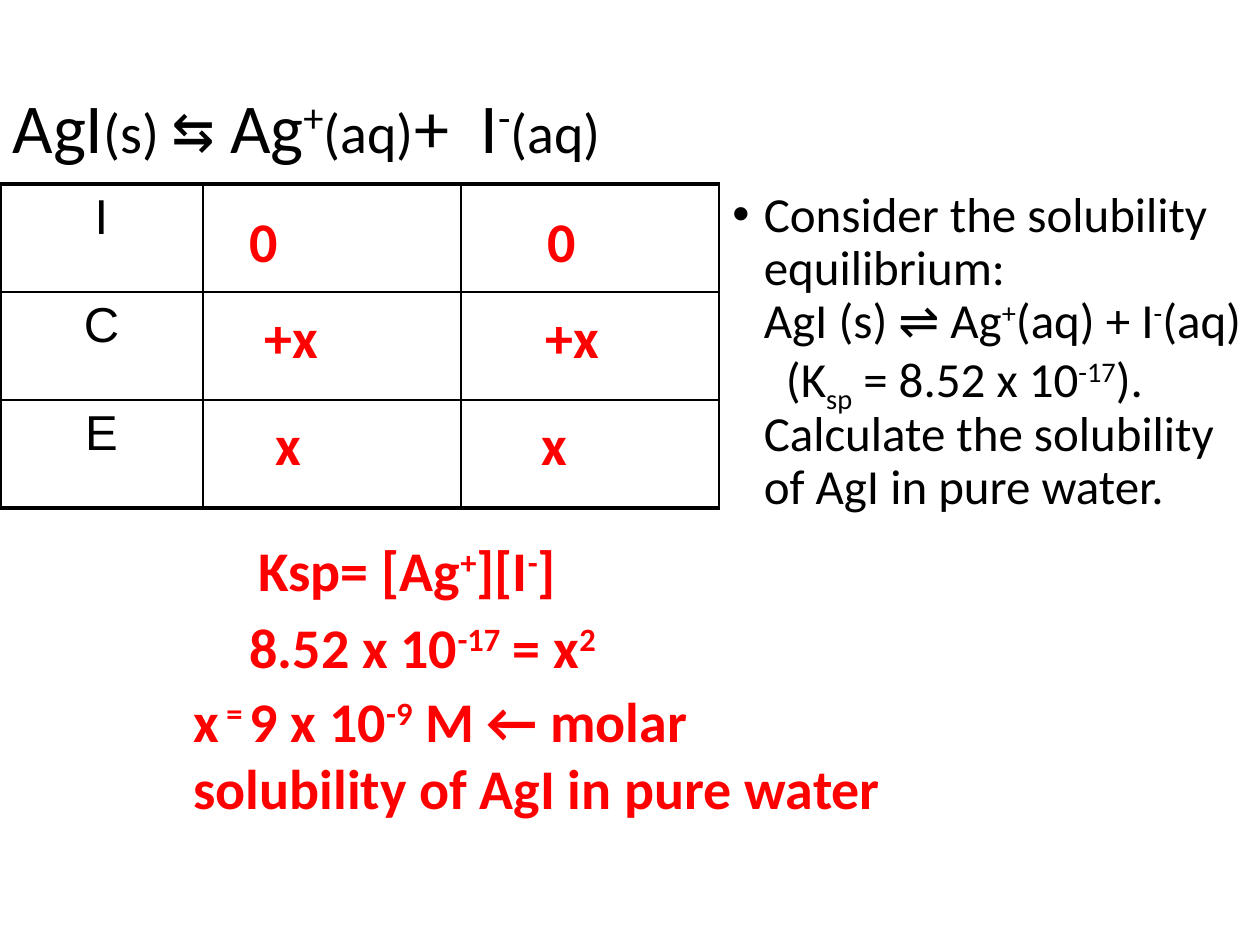
"""Build a slide that works out the solubility of AgI with an ICE table."""
import pptx
import pptx.dml.color
import pptx.enum.text
import pptx.oxml
import pptx.oxml.ns
import pptx.util

SCALE = 914400 / 126
BLACK = pptx.dml.color.RGBColor(0x00, 0x00, 0x00)
RED = pptx.dml.color.RGBColor(0xFF, 0x00, 0x00)
NAMESPACE = pptx.oxml.ns.nsdecls("a")


def box(*lengths):
    return [pptx.util.Emu(round(length * SCALE)) for length in lengths]


def write(paragraph, runs, size, color, bold=False, name="Calibri"):
    paragraph.font.name = name
    paragraph.font.size = pptx.util.Pt(size)
    paragraph.font.bold = bold
    paragraph.font.color.rgb = color
    for text, baseline in runs:
        if text == "\n":
            paragraph.add_line_break()
            continue
        run = paragraph.add_run()
        run.text = text
        if baseline:
            run.font._element.set("baseline", str(baseline * 1000))


presentation = pptx.Presentation()
presentation.slide_width, presentation.slide_height = box(1260, 945)
slide = presentation.slides.add_slide(presentation.slide_layouts[5])

title = slide.shapes.title
title.left, title.top, title.width, title.height = box(0, 39, 1086, 183)
title.text_frame.vertical_anchor = pptx.enum.text.MSO_ANCHOR.MIDDLE
paragraph = title.text_frame.paragraphs[0]
paragraph.alignment = pptx.enum.text.PP_ALIGN.LEFT
paragraph.line_spacing = 0.9
title_runs = [
    ("AgI", 40, 0), ("(s) ", 32, 0), ("⇆", 40, 0), (" Ag", 40, 0), ("+", 40, 30),
    ("(aq)", 32, 0), ("+  I", 40, 0), ("-", 40, 30), ("(aq)", 32, 0),
]
for text, size, baseline in title_runs:
    run = paragraph.add_run()
    run.text = text
    run.font.name = "DejaVu Sans Mono" if text == "⇆" else "Calibri"
    run.font.size = pptx.util.Pt(size)
    run.font.color.rgb = BLACK
    if baseline:
        run.font._element.set("baseline", str(baseline * 1000))

question = slide.shapes.add_textbox(*box(720, 184, 540, 600))
question.text_frame.word_wrap = True
paragraph = question.text_frame.paragraphs[0]
paragraph.line_spacing = 0.9
paragraph.space_before = pptx.util.Pt(10)
question_runs = [
    ("Consider the solubility equilibrium:  ", 0), ("\n", 0), ("AgI (s) ⇌ Ag", 0), ("+", 30),
    ("(aq) + I", 0), ("-", 30), ("(aq)   (K", 0), ("sp", -25), (" = 8.52 x 10", 0),
    ("-17", 30), ("). Calculate the solubility of AgI in pure water.", 0),
]
write(paragraph, question_runs, 28, BLACK)
properties = paragraph._p.get_or_add_pPr()
properties.set("marL", "228600")
properties.set("indent", "-228600")
bullet_at = len(properties) - 1
properties.insert(bullet_at, pptx.oxml.parse_xml(f'<a:buFont {NAMESPACE} typeface="Arial"/>'))
properties.insert(bullet_at + 1, pptx.oxml.parse_xml(f'<a:buChar {NAMESPACE} char="•"/>'))

table = slide.shapes.add_table(3, 3, *box(0, 184, 720, 324)).table
table.first_row = table.horz_banding = False
for column, width in zip(table.columns, box(203, 258, 258)):
    column.width = width
for row, label in enumerate("ICE"):
    table.rows[row].height = box(108)[0]
    paragraph = table.cell(row, 0).text_frame.paragraphs[0]
    paragraph.alignment = pptx.enum.text.PP_ALIGN.CENTER
    paragraph.space_before = pptx.util.Pt(5.6)
    write(paragraph, [(label, 0)], 28, BLACK, name="Arial")
    for column in range(3):
        cell = table.cell(row, column)
        cell.fill.background()
        thick = {"L": column == 0, "R": False, "T": row == 0, "B": row == 2}
        for index, (side, heavy) in enumerate(thick.items()):
            width = pptx.util.Pt(2.25 if heavy else 1)
            border = pptx.oxml.parse_xml(
                f'<a:ln{side} {NAMESPACE} w="{width}"><a:solidFill>'
                f'<a:srgbClr val="{BLACK}"/></a:solidFill></a:ln{side}>'
            )
            cell._tc.get_or_add_tcPr().insert(index, border)

answers = [
    (237, 200, 217, 81, [("0", 0)]),
    (535, 200, 217, 81, [("0", 0)]),
    (252, 296, 217, 81, [("+x", 0)]),
    (533, 296, 217, 81, [("+x", 0)]),
    (263, 403, 217, 81, [("x", 0)]),
    (529, 403, 217, 81, [("x", 0)]),
    (237, 606, 544, 81, [("8.52 x 10", 0), ("-17", 30), (" = x", 0), ("2", 30)]),
    (181, 680, 737, 149, [("x", 0), (" = ", 30), ("9 x 10", 0), ("-9", 30),
                          (" M ← molar solubility of AgI in pure water", 0)]),
    (246, 529, 544, 81, [("Ksp= [Ag", 0), ("+", 30), ("][I", 0), ("-", 30), ("]", 0)]),
]
for left, top, width, height, runs in answers:
    answer = slide.shapes.add_textbox(*box(left, top, width, height))
    answer.text_frame.word_wrap = True
    answer.text_frame.auto_size = pptx.enum.text.MSO_AUTO_SIZE.SHAPE_TO_FIT_TEXT
    write(answer.text_frame.paragraphs[0], runs, 32, RED, bold=True)

presentation.save("out.pptx")
